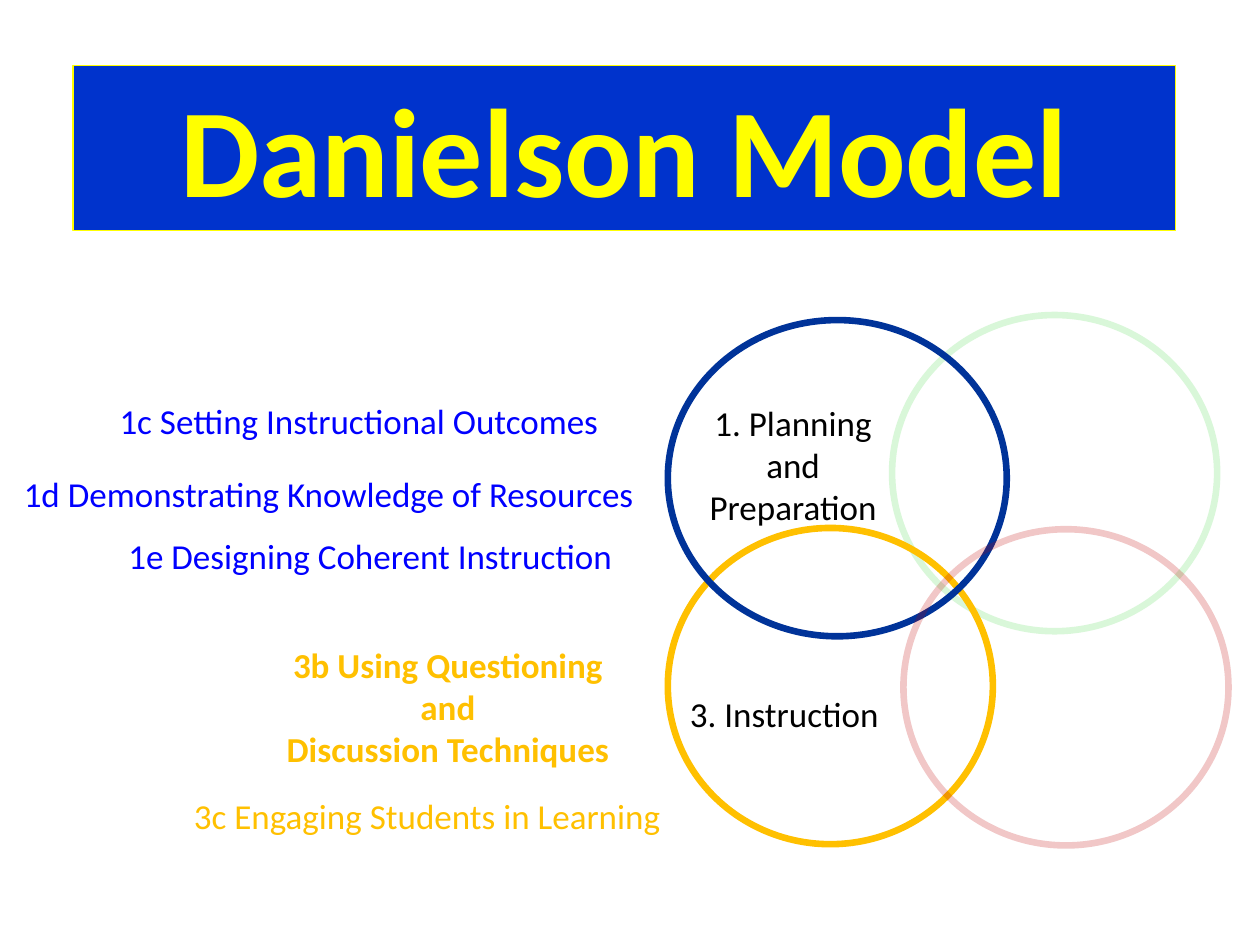
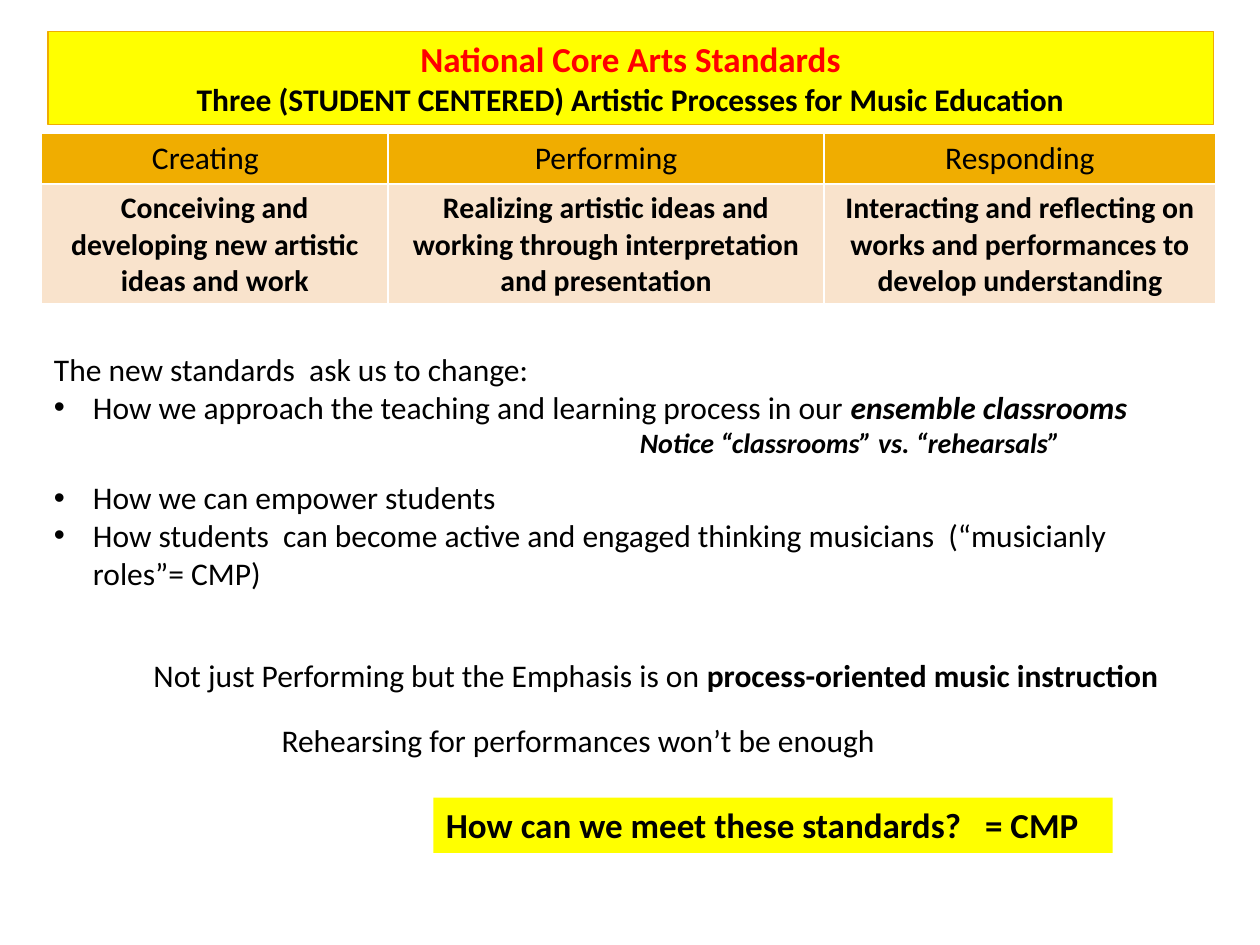
from lxml.etree import SubElement
from pptx import Presentation
from pptx.dml.color import RGBColor
from pptx.enum.shapes import MSO_SHAPE as Shape
from pptx.enum.text import MSO_ANCHOR as Anchor, PP_ALIGN as Align
from pptx.oxml.ns import qn
from pptx.util import Inches, Pt

FONT = "Calibri"
COLORS = {
    "black": "000000", "white": "FFFFFF", "yellow": "FFFF00", "red": "FF0000",
    "banner": "0033CC", "planning": "003399", "planning_text": "0000FF",
    "instruction": "FFC000", "environment": "00CC00", "professional": "C00000",
    "header": "F0AD00", "cell": "F9E3CC",
}


def rgb(color):
    return RGBColor.from_string(COLORS[color])


def style(paragraph, size, color="black", bold=False, align=Align.LEFT):
    paragraph.alignment = align
    font = paragraph.font
    font.name, font.size, font.bold = FONT, Pt(size), bold
    font.color.rgb = rgb(color)


def write_lines(frame, lines, size, color="black", bold=False, align=Align.LEFT):
    for index, line in enumerate(lines):
        paragraph = frame.paragraphs[0] if index == 0 else frame.add_paragraph()
        paragraph.text = line
        style(paragraph, size, color, bold, align)


def add_emphasis(paragraph, text, italic=False):
    run = paragraph.add_run()
    run.text = text
    run.font.bold = True
    if italic:
        run.font.italic = True


def add_label(slide, box, lines, size, color="black", bold=False,
              align=Align.CENTER, wrap=False):
    frame = slide.shapes.add_textbox(*map(Inches, box)).text_frame
    frame.word_wrap = wrap
    write_lines(frame, lines, size, color, bold, align)
    return frame


def add_ring(slide, box, color, opacity=100):
    """Draw an unfilled circle; opacity is in percent."""
    ring = slide.shapes.add_shape(Shape.OVAL, *map(Inches, box))
    ring.shadow.inherit = False
    ring.fill.background()
    ring.line.color.rgb = rgb(color)
    ring.line.width = Pt(3.78)
    if opacity < 100:
        shade = ring.line.fill._xPr.find(".//" + qn("a:srgbClr"))
        SubElement(shade, qn("a:alpha"), val=str(opacity * 1000))


def add_band(slide, box, fill, outline=None):
    band = slide.shapes.add_shape(Shape.RECTANGLE, *map(Inches, box))
    band.shadow.inherit = False
    band.fill.solid()
    band.fill.fore_color.rgb = rgb(fill)
    if outline:
        band.line.color.rgb = rgb(outline)
        band.line.width = Pt(0.75)
    else:
        band.line.fill.background()
    frame = band.text_frame
    frame.word_wrap = True
    frame.vertical_anchor = Anchor.TOP
    return frame


def add_bullet(paragraph):
    properties = paragraph._p.get_or_add_pPr()
    properties.set("marL", str(Inches(0.31)))
    properties.set("indent", str(-Inches(0.31)))
    SubElement(properties, qn("a:buFont"), typeface="Arial")
    SubElement(properties, qn("a:buChar"), char="•")


def add_tab_stop(paragraph, position):
    stops = SubElement(paragraph._p.get_or_add_pPr(), qn("a:tabLst"))
    SubElement(stops, qn("a:tab"), pos=str(Inches(position)), algn="l")


def border_cell(cell):
    properties = cell._tc.get_or_add_tcPr()
    for side in "LRTB":
        line = SubElement(properties, qn(f"a:ln{side}"), w=str(Pt(1)))
        fill = SubElement(line, qn("a:solidFill"))
        SubElement(fill, qn("a:srgbClr"), val=COLORS["white"])


def add_process_table(slide, processes):
    widths, heights = (2.75, 3.46, 3.11), (0.4, 0.95)
    table = slide.shapes.add_table(
        2, 3, Inches(0.33), Inches(1.06), Inches(sum(widths)), Inches(sum(heights))).table
    table.first_row = table.horz_banding = False
    for row, height in zip(table.rows, heights):
        row.height = Inches(height)
    for column, (width, process) in enumerate(zip(widths, processes)):
        table.columns[column].width = Inches(width)
        for row, text in enumerate(process):
            cell = table.cell(row, column)
            border_cell(cell)
            cell.fill.solid()
            cell.fill.fore_color.rgb = rgb("cell" if row else "header")
            write_lines(cell.text_frame, [text], 17 if row else 18,
                        bold=bool(row), align=Align.CENTER)
    table.cell(0, 0).margin_right = Inches(0.25)


def add_changes(slide):
    """List what the new standards ask teachers to change."""
    intro, approach, notice, empower, roles = (
        "The new standards  ask us to change:",
        "How we approach the teaching and learning process in our ",
        "Notice “classrooms” vs. “rehearsals”",
        "How we can empower students",
        "How students  can become active and engaged thinking musicians  "
        "(“musicianly roles”= CMP)",
    )
    frame = add_label(slide, (0.33, 2.58, 9.33, 2.19), [], 18, wrap=True)
    for text in (intro, approach, notice, empower, roles):
        paragraph = frame.paragraphs[0] if text == intro else frame.add_paragraph()
        paragraph.text = text
        if text in (approach, empower, roles):
            add_bullet(paragraph)
        if text in (intro, empower):
            paragraph.line_spacing = 1.5
        style(paragraph, 16 if text == notice else 18, bold=text == notice)
        if text == approach:
            add_emphasis(paragraph, "ensemble classrooms", italic=True)
        if text == notice:
            paragraph.font.italic = True
            paragraph._p.get_or_add_pPr().set("marL", str(Inches(4.65)))


def build_model_slide(slide):
    for box, text, color in (
        ((0.92, 4.19, 4.12, 0.44), "1e Designing Coherent Instruction", "planning_text"),
        ((0.85, 3.12, 4.11, 0.44), "1c Setting Instructional Outcomes", "planning_text"),
        ((0.09, 3.7, 5.19, 0.44), "1d Demonstrating Knowledge of Resources", "planning_text"),
        ((1.44, 6.26, 4.05, 0.44), "3c Engaging Students in Learning", "instruction"),
    ):
        add_label(slide, box, [text], 20, color, align=Align.LEFT)
    add_label(slide, (1.92, 5.06, 3.27, 1.11),
              ["3b Using Questioning", "and", "Discussion Techniques"],
              20, "instruction", bold=True, wrap=True)

    add_ring(slide, (7.08, 2.5, 2.58, 2.51), "environment", 15)
    add_label(slide, (5.51, 3.14, 1.57, 1.11), ["1. Planning", "and", "Preparation"], 20)
    add_ring(slide, (5.3, 4.19, 2.58, 2.51), "instruction")
    add_label(slide, (5.37, 5.45, 1.71, 0.44), ["3. Instruction"], 20)
    title = add_band(slide, (0.58, 0.52, 8.75, 1.31), "banner", "yellow")
    write_lines(title, ["Danielson Model"], 72, "yellow", True, Align.CENTER)
    add_ring(slide, (5.3, 2.54, 2.69, 2.51), "planning")
    add_ring(slide, (7.17, 4.2, 2.58, 2.51), "professional", 22)


def build_standards_slide(slide):
    add_changes(slide)
    add_process_table(slide, (
        ("Creating", "Conceiving and developing new artistic ideas and work"),
        ("Performing", "Realizing artistic ideas and working through "
                       "interpretation and presentation"),
        ("Responding", "Interacting and reflecting on works and performances "
                       "to develop understanding"),
    ))
    add_label(slide, (2.08, 5.67, 5.02, 0.4),
              ["Rehearsing for performances won’t be enough"], 18)
    emphasis = add_label(slide, (1.12, 5.16, 8.5, 0.4),
                         ["Not just Performing but the Emphasis is on "], 18, align=Align.LEFT)
    add_emphasis(emphasis.paragraphs[0], "process-oriented music instruction")

    question = add_band(slide, (3.44, 6.33, 5.39, 0.44), "yellow")
    add_tab_stop(question.paragraphs[0], 4.28)
    write_lines(question, ["How can we meet these standards?\t= CMP"], 20, bold=True)

    title = add_band(slide, (0.38, 0.25, 9.25, 0.74), "yellow", "header")
    write_lines(title, ["National Core Arts Standards",
                        "Three (STUDENT CENTERED) Artistic Processes for Music Education"],
                18, bold=True, align=Align.CENTER)
    style(title.paragraphs[0], 20, "red", True, Align.CENTER)


def main():
    deck = Presentation()
    deck.slide_width, deck.slide_height = Inches(10), Inches(7.5)
    blank = deck.slide_layouts[6]
    for build in (build_model_slide, build_standards_slide):
        build(deck.slides.add_slide(blank))
    deck.save("out.pptx")


if __name__ == "__main__":
    main()
